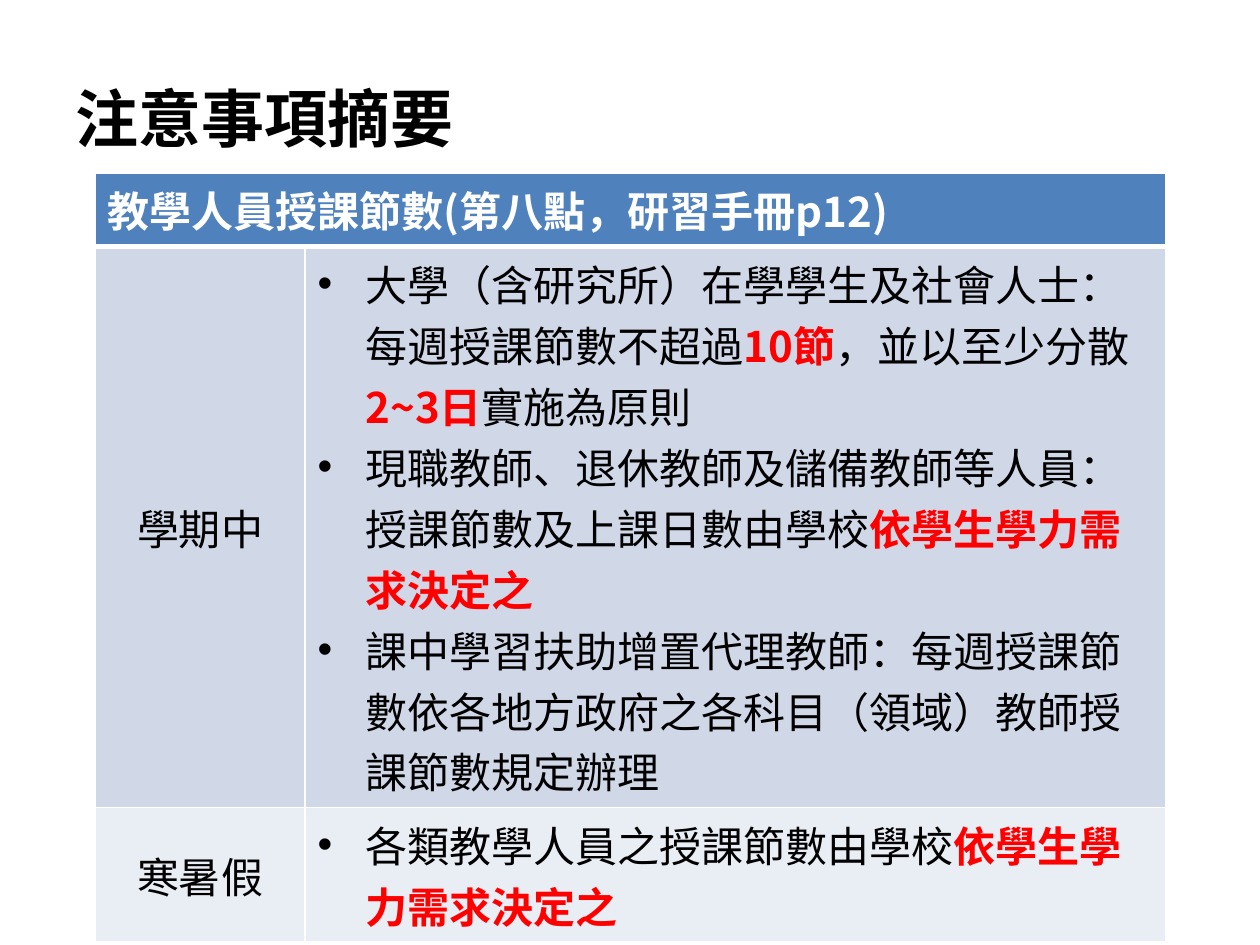
from dataclasses import dataclass

from lxml import etree
from pptx import Presentation
from pptx.dml.color import RGBColor
from pptx.enum.text import MSO_ANCHOR, PP_ALIGN
from pptx.oxml.ns import qn
from pptx.util import Emu, Pt

MIDDLE, TOP = MSO_ANCHOR.MIDDLE, MSO_ANCHOR.TOP
LEFT, CENTER = PP_ALIGN.LEFT, PP_ALIGN.CENTER
SCALE = 914400 / 126


@dataclass(frozen=True)
class Theme:
    font: str = "Noto Sans CJK SC"
    title_size: int = 36
    body_size: int = 24
    text: str = "000000"
    accent: str = "FF0000"
    header: str = "4F81BD"
    band_dark: str = "D0D8E8"
    band_light: str = "E9EDF4"
    white: str = "FFFFFF"


theme = Theme()


def px(n):
    return Emu(round(n * SCALE))


def add_run(p, text, size, color, bold):
    r = p.add_run()
    r.text = text
    r.font.size = Pt(size)
    r.font.bold = bold
    r.font.name = theme.font
    r.font.color.rgb = RGBColor.from_string(color)
    etree.SubElement(r.font._element, qn("a:ea"), typeface=theme.font)


prs = Presentation()
prs.slide_width, prs.slide_height = px(1260), px(945)
s = prs.slides.add_slide(prs.slide_layouts[5])

title = s.shapes.title
title.left, title.top, title.width, title.height = px(63), px(38), px(1134), px(158)
tf = title.text_frame
tf.vertical_anchor = MIDDLE
p = tf.paragraphs[0]
p.alignment = LEFT
add_run(p, "注意事項摘要", theme.title_size, theme.text, True)

need = ("依學生學力需求決定之", True)
term_rules = [
    [
        ("大學（含研究所）在學學生及社會人士：每週授課節數不超過", False),
        ("10節", True),
        ("，並以至少分散", False),
        ("2~3日", True),
        ("實施為原則", False),
    ],
    [("現職教師、退休教師及儲備教師等人員：授課節數及上課日數由學校", False), need],
    [("課中學習扶助增置代理教師：每週授課節數依各地方政府之各科目（領域）教師授課節數規定辦理", False)],
]
vacation_rules = [[("各類教學人員之授課節數由學校", False), need]]
rows = [
    (72, theme.header, "教學人員授課節數(第八點，研習手冊p12)", []),
    (561, theme.band_dark, "學期中", term_rules),
    (134, theme.band_light, "寒暑假", vacation_rules),
]
widths = [210, 861]

height = sum(row[0] for row in rows)
table = s.shapes.add_table(len(rows), len(widths), px(95), px(173), px(sum(widths)), px(height)).table
for column, width in zip(table.columns, widths):
    column.width = px(width)
table.cell(0, 0).merge(table.cell(0, 1))

for i, (row_height, fill, label, rules) in enumerate(rows):
    table.rows[i].height = px(row_height)
    is_header = i == 0
    for cell in table.rows[i].cells:
        cell.vertical_anchor = TOP if is_header else MIDDLE
        tcPr = cell._tc.get_or_add_tcPr()
        edges = {"lnL": 1, "lnR": 1, "lnT": 3 if i == 1 else 1, "lnB": 3 if is_header else 1}
        for edge, points in edges.items():
            ln = etree.SubElement(tcPr, qn(f"a:{edge}"), w=str(Pt(points)))
            solid = etree.SubElement(ln, qn("a:solidFill"))
            etree.SubElement(solid, qn("a:srgbClr"), val=theme.white)
        cell.fill.solid()
        cell.fill.fore_color.rgb = RGBColor.from_string(fill)

    p = table.cell(i, 0).text_frame.paragraphs[0]
    p.alignment = LEFT if is_header else CENTER
    add_run(p, label, theme.body_size, theme.white if is_header else theme.text, is_header)

    tf = table.cell(i, 1).text_frame
    for j, rule in enumerate(rules):
        p = tf.add_paragraph() if j else tf.paragraphs[0]
        pPr = p._p.get_or_add_pPr()
        pPr.set("marL", str(px(48)))
        pPr.set("indent", str(-px(48)))
        etree.SubElement(pPr, qn("a:buFont"), typeface="Arial")
        etree.SubElement(pPr, qn("a:buChar"), char="•")
        for text, strong in rule:
            add_run(p, text, theme.body_size, theme.accent if strong else theme.text, strong)

prs.save("out.pptx")
